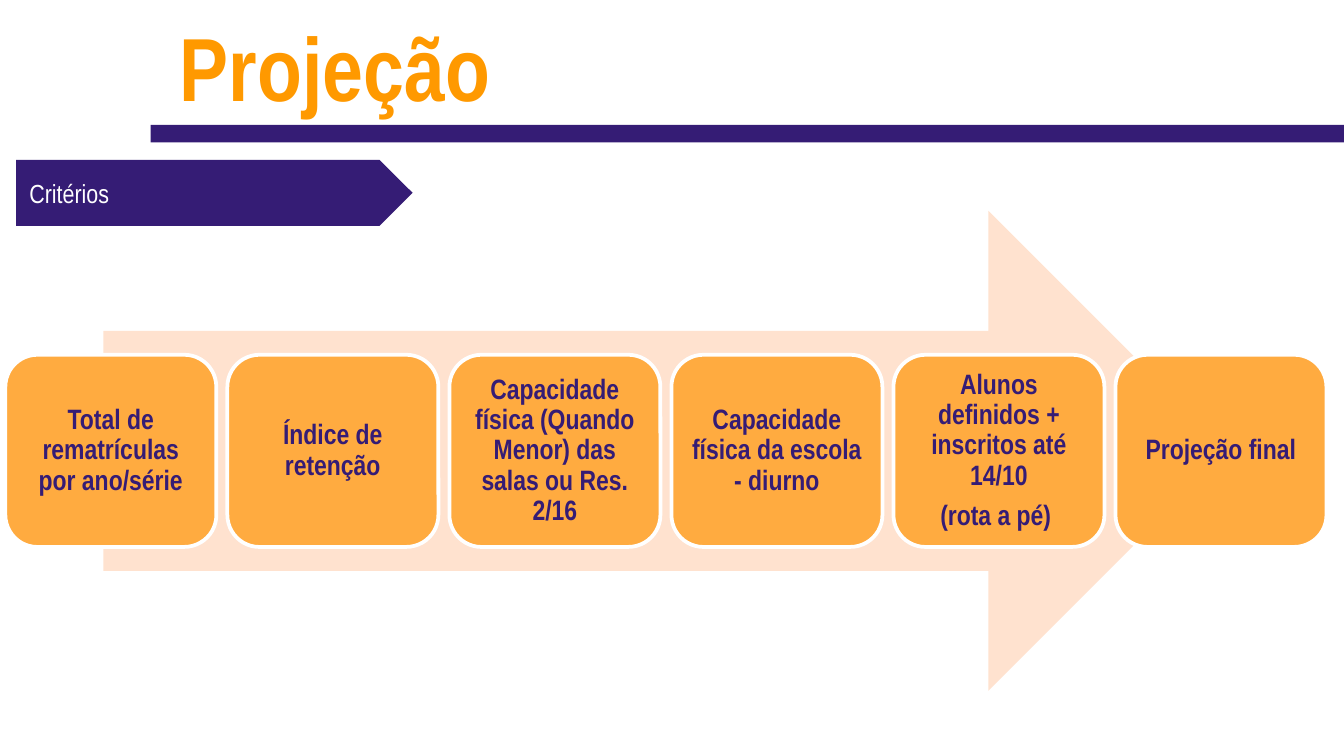
import pptx
import pptx.util
import pptx.dml.color
import pptx.enum.shapes
import pptx.enum.text

Inches = pptx.util.Inches
Pt = pptx.util.Pt
Shape = pptx.enum.shapes.MSO_SHAPE
Align = pptx.enum.text.PP_ALIGN

TITLE = "Projeção"
LABEL = "Critérios"
STEPS = [
    ["Total de rematrículas por ano/série"],
    ["Índice de retenção"],
    ["Capacidade física (Quando Menor) das salas ou Res. 2/16"],
    ["Capacidade física da escola - diurno"],
    ["Alunos definidos + inscritos até 14/10", "(rota a pé) "],
    ["Projeção final"],
]

THEME = {
    "font": "Arial Narrow",
    "title": "FF9900", "dark": "351C75", "light": "FFFFFF",
    "step": "FFAB40", "arrow": "FFE2CF",
    "title_size": 48, "label_size": 14, "step_size": 15,
}

FIRST_LEFT, LAST_LEFT, STEP_TOP = 0.04, 8.3, 2.64
STEP_WIDTH, STEP_HEIGHT = 1.57, 1.43
STEP_PITCH = (LAST_LEFT - FIRST_LEFT) / (len(STEPS) - 1)


def color(name):
    return pptx.dml.color.RGBColor.from_string(THEME[name])


def add_block(slide, kind, left, top, width, height, fill):
    block = slide.shapes.add_shape(
        kind, Inches(left), Inches(top), Inches(width), Inches(height))
    block.shadow.inherit = False
    block.fill.solid()
    block.fill.fore_color.rgb = color(fill)
    block.line.fill.background()
    return block


def write(shape, lines, style, size, inset, bold=False, align=Align.LEFT):
    """Fill the shape with one paragraph per line and return the paragraphs."""
    frame = shape.text_frame
    frame.word_wrap = True
    frame.vertical_anchor = pptx.enum.text.MSO_ANCHOR.MIDDLE
    frame.margin_left = frame.margin_right = Inches(inset)
    frame.margin_top = frame.margin_bottom = Inches(inset)
    frame.text = "\n".join(lines)
    for para in frame.paragraphs:
        para.alignment = align
        para.font.name = THEME["font"]
        para.font.size = Pt(THEME[size])
        para.font.bold = bold
        para.font.color.rgb = color(style)
    return frame.paragraphs


def add_header(slide):
    title = slide.shapes.add_textbox(
        Inches(1.24), Inches(0.23), Inches(8.87), Inches(0.52))
    write(title, [TITLE], "title", "title_size", 0.1, bold=True)
    label = add_block(slide, Shape.PENTAGON, 0.12, 1.19, 2.95, 0.49, "dark")
    write(label, [LABEL], "light", "label_size", 0.1)
    add_block(slide, Shape.RECTANGLE, 1.12, 0.93, 9.39, 0.13, "dark")


def add_process(slide):
    add_block(slide, Shape.RIGHT_ARROW, 0.77, 1.57, 8.37, 3.57, "arrow")
    for index, lines in enumerate(STEPS):
        box = add_block(slide, Shape.ROUNDED_RECTANGLE,
                        FIRST_LEFT + index * STEP_PITCH, STEP_TOP,
                        STEP_WIDTH, STEP_HEIGHT, "step")
        box.line.color.rgb = color("light")
        box.line.width = Pt(2)
        for para in write(box, lines, "dark", "step_size", 0.06,
                          bold=True, align=Align.CENTER):
            para.line_spacing = 0.9
            para.space_after = Pt(0.35 * THEME["step_size"])


def main():
    deck = pptx.Presentation()
    deck.slide_width = Inches(10)
    deck.slide_height = deck.slide_width * 9 // 16
    slide = deck.slides.add_slide(deck.slide_layouts[6])
    add_header(slide)
    add_process(slide)
    deck.save("out.pptx")


if __name__ == "__main__":
    main()
